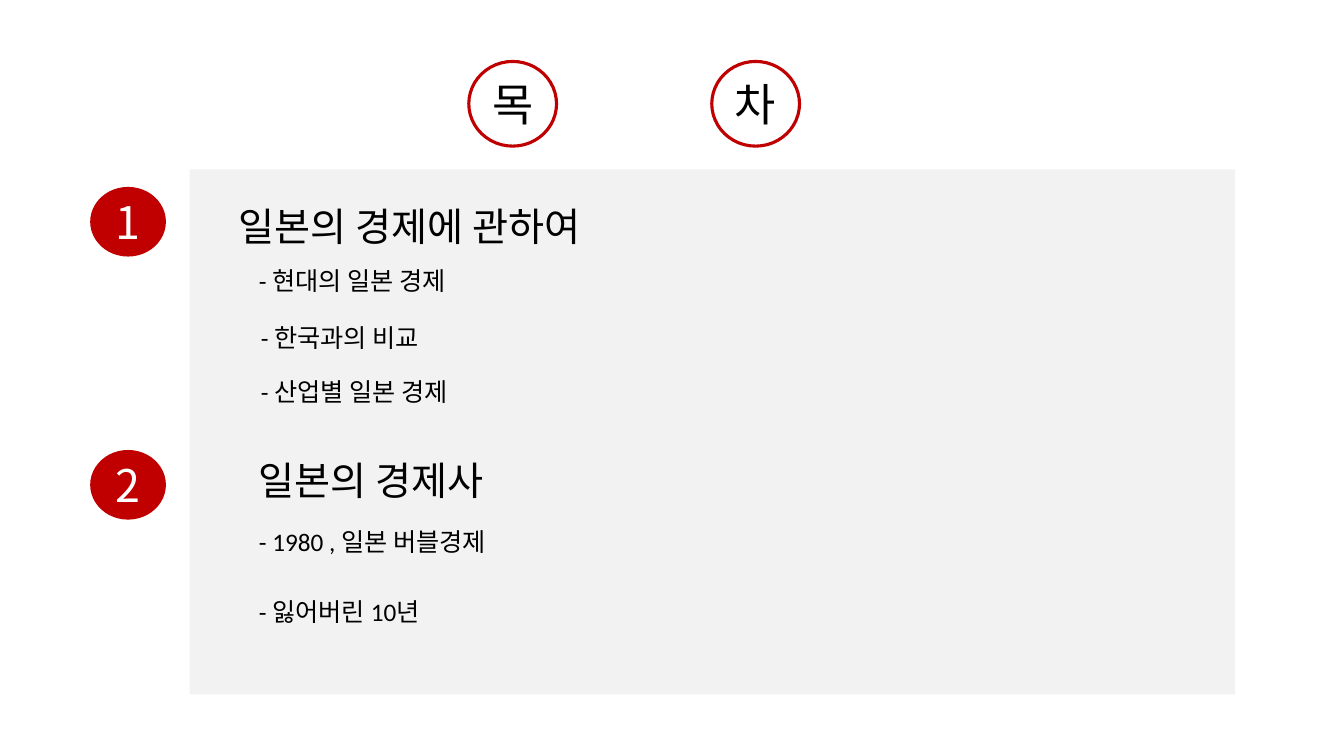
from lxml import etree
from pptx import Presentation
from pptx.dml.color import RGBColor
from pptx.enum.shapes import MSO_SHAPE
from pptx.enum.text import MSO_ANCHOR, PP_ALIGN
from pptx.oxml.ns import qn
from pptx.util import Inches, Pt

RECT, OVAL = MSO_SHAPE.RECTANGLE, MSO_SHAPE.OVAL
TOP, MIDDLE = MSO_ANCHOR.TOP, MSO_ANCHOR.MIDDLE
LEFT, CENTER = PP_ALIGN.LEFT, PP_ALIGN.CENTER
KOREAN, LATIN = "Noto Sans CJK KR", "Calibri"
RED, WHITE, BLACK, GREY = "C00000", "FFFFFF", "000000", "F2F2F2"


def color(code):
    return RGBColor.from_string(code)


def write(shape, text, size=18, font=KOREAN, ink=BLACK, align=LEFT,
          anchor=MIDDLE, wrap=True):
    frame = shape.text_frame
    frame.word_wrap = wrap
    frame.vertical_anchor = anchor
    para = frame.paragraphs[0]
    para.alignment = align
    run = para.add_run()
    run.text = text
    run.font.size = Pt(size)
    run.font.name = font
    run.font.color.rgb = color(ink)
    # Hangul needs its own East Asian typeface
    asian = etree.SubElement(run.font._element, qn("a:ea"))
    asian.set("typeface", KOREAN)


def add_form(slide, kind, box, fill, line=None):
    shape = slide.shapes.add_shape(kind, *map(Inches, box))
    shape.shadow.inherit = False
    shape.fill.solid()
    shape.fill.fore_color.rgb = color(fill)
    if line:
        shape.line.color.rgb = color(line)
        shape.line.width = Pt(2.25)
    else:
        shape.line.fill.background()
    return shape


def add_disc(slide, box, text, fill, ink):
    disc = add_form(slide, OVAL, box, fill, RED)
    write(disc, text, size=32, ink=ink, align=CENTER, wrap=False)


def add_label(slide, box, text, **style):
    label = slide.shapes.add_textbox(*map(Inches, box))
    write(label, text, **style)


def main():
    deck = Presentation()
    deck.slide_width, deck.slide_height = Inches(13.33), Inches(7.5)
    slide = deck.slides.add_slide(deck.slide_layouts[6])

    # Panel behind the contents
    add_form(slide, RECT, (1.88, 1.68, 10.37, 5.21), GREY)

    # Title, one syllable per ring
    for left, text in ((4.65, "목"), (7.06, "차")):
        add_disc(slide, (left, 0.61, 0.87, 0.84), text, WHITE, BLACK)

    # Section numbers
    for top, text in ((1.87, "1"), (4.48, "2")):
        add_disc(slide, (0.91, top, 0.72, 0.66), text, RED, WHITE)

    # Section headings
    for left, top, text in ((2.27, 1.94, "일본의 경제에 관하여"),
                            (2.47, 4.46, "일본의 경제사")):
        add_label(slide, (left, top, 9.54, 0.61), text, size=28)

    # Items under each heading
    items = (
        (2.47, 2.58, "- 현대의 일본 경제"),
        (2.49, 3.15, "- 한국과의 비교"),
        (2.49, 3.68, "- 산업별 일본 경제"),
        (2.47, 5.17, "- 1980 , 일본 버블경제"),
        (2.47, 5.87, "- 잃어버린 10년"),
    )
    for left, top, text in items:
        add_label(slide, (left, top, 6.67, 0.4), text, font=LATIN, anchor=TOP)

    deck.save("out.pptx")


if __name__ == "__main__":
    main()
